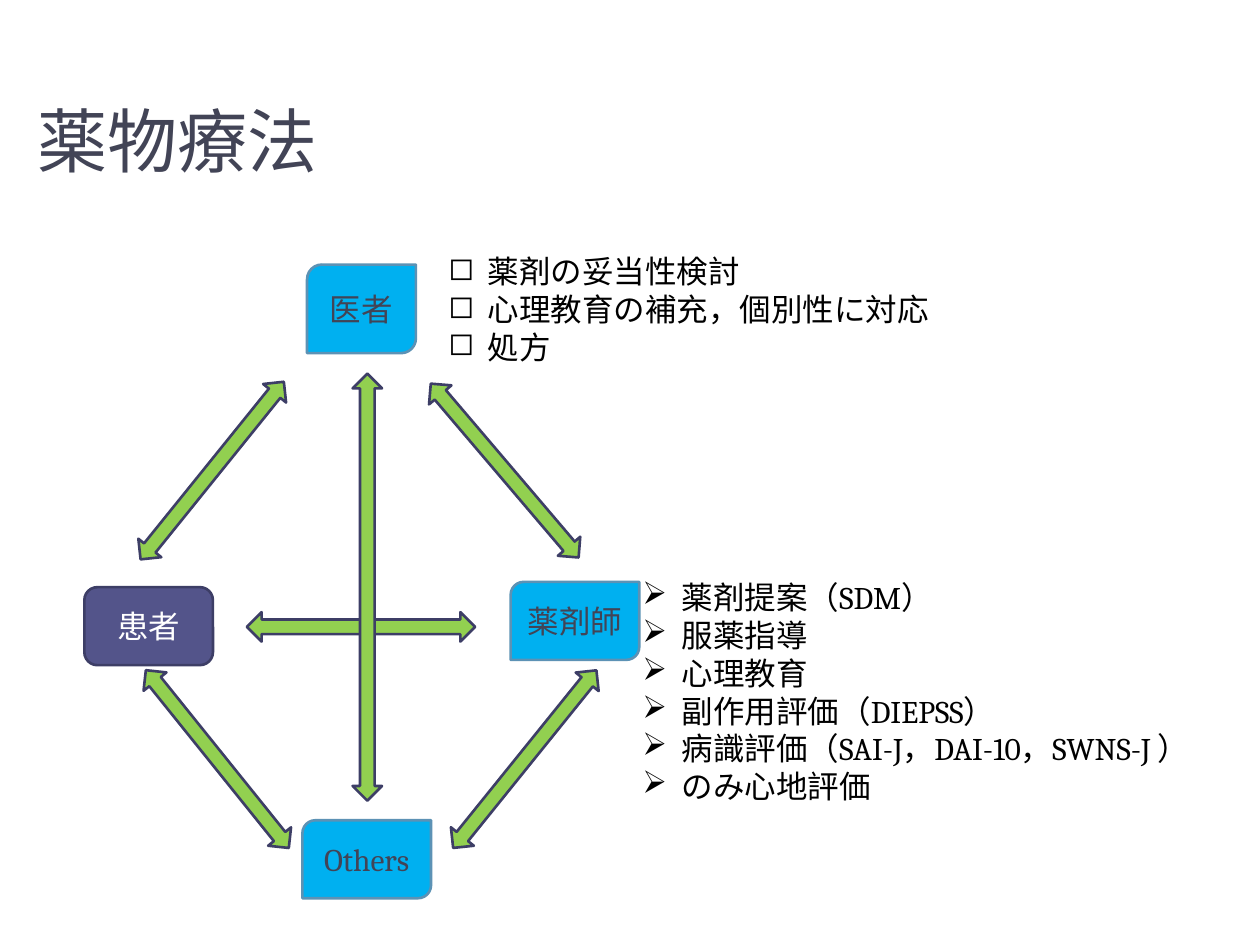
from dataclasses import dataclass
from lxml.etree import SubElement
from pptx import Presentation
from pptx.dml.color import RGBColor as Color
from pptx.enum.shapes import MSO_SHAPE as Shape
from pptx.enum.text import MSO_ANCHOR as Anchor, MSO_AUTO_SIZE as AutoSize, PP_ALIGN as Align
from pptx.oxml.ns import qn
from pptx.util import Pt


@dataclass(frozen=True)
class Theme:
    ink: str = "424456"
    black: str = "000000"
    white: str = "FFFFFF"
    patient: str = "53548A"
    staff: str = "00B0F0"
    arrow: str = "92D050"
    dark_edge: str = "3D3E66"
    staff_edge: str = "5C92B5"
    title_font: str = "Roboto"
    body_font: str = "Cambria"
    title_size: float = 40
    body_size: float = 18
    edge_width: float = 1.5
    bullet_indent: float = 22.5


def assign(target, values):
    for name, value in values.items():
        setattr(target, name, value)


class SlideBuilder:
    def __init__(self, page, theme):
        self.page = page
        self.theme = theme

    def add_span(self, para, text, color, font=None, size=None):
        span = para.add_run()
        span.text = text
        assign(span.font, {
            "name": font or self.theme.body_font,
            "size": Pt(size or self.theme.body_size),
        })
        span.font.color.rgb = Color.from_string(color)

    def title(self, text, left, top, width, height):
        box = self.page.shapes.title
        assign(box, {"left": Pt(left), "top": Pt(top), "width": Pt(width), "height": Pt(height)})
        assign(box.text_frame, {"vertical_anchor": Anchor.MIDDLE, "word_wrap": True})
        para = box.text_frame.paragraphs[0]
        para.alignment = Align.LEFT
        self.add_span(para, text, self.theme.ink, self.theme.title_font, self.theme.title_size)

    def shape(self, kind, left, top, width, height, fill, edge):
        shape = self.page.shapes.add_shape(kind, Pt(left), Pt(top), Pt(width), Pt(height))
        shape.shadow.inherit = False
        shape.fill.solid()
        shape.fill.fore_color.rgb = Color.from_string(fill)
        shape.line.color.rgb = Color.from_string(edge)
        shape.line.width = Pt(self.theme.edge_width)
        return shape

    def role(self, text, left, top, width=73.5, height=44.6, patient=False):
        theme = self.theme
        kind, fill, edge, color = (
            (Shape.ROUNDED_RECTANGLE, theme.patient, theme.dark_edge, theme.white)
            if patient
            else (Shape.ROUND_2_DIAG_RECTANGLE, theme.staff, theme.staff_edge, theme.ink)
        )
        box = self.shape(kind, left, top, width, height, fill, edge)
        assign(box.text_frame, {"vertical_anchor": Anchor.MIDDLE, "word_wrap": True})
        para = box.text_frame.paragraphs[0]
        para.alignment = Align.CENTER
        self.add_span(para, text, color)

    def arrow(self, center_x, center_y, rotation=0, length=130.4, thickness=16.8):
        arrow = self.shape(
            Shape.LEFT_RIGHT_ARROW, center_x - length / 2, center_y - thickness / 2,
            length, thickness, self.theme.arrow, self.theme.dark_edge,
        )
        arrow.rotation = rotation

    def bullets(self, lines, mark, left, top, width, height, wrap=True):
        box = self.page.shapes.add_textbox(Pt(left), Pt(top), Pt(width), Pt(height))
        frame = box.text_frame
        assign(frame, {"word_wrap": wrap, "auto_size": AutoSize.SHAPE_TO_FIT_TEXT})
        indent = Pt(self.theme.bullet_indent)
        for index, line in enumerate(lines):
            para = frame.add_paragraph() if index else frame.paragraphs[0]
            properties = para._p.get_or_add_pPr()
            properties.set("marL", str(indent))
            properties.set("indent", str(-indent))
            SubElement(properties, qn("a:buChar")).set("char", mark)
            self.add_span(para, line, self.theme.black)


def main():
    deck = Presentation()
    assign(deck, {"slide_width": Pt(720), "slide_height": Pt(540)})
    builder = SlideBuilder(deck.slides.add_slide(deck.slide_layouts[5]), Theme())

    builder.title("薬物療法", 14.4, 37.4, 648, 84.2)
    builder.role("患者", 48.2, 335.5, patient=True)
    builder.role("医者", 175.5, 151.2, width=62.2, height=50.6)
    builder.role("薬剤師", 291.8, 332.5)
    builder.arrow(206.3, 358.2)
    builder.bullets(
        ["薬剤提案（SDM）", "服薬指導", "心理教育", "副作用評価（DIEPSS）",
         "病識評価（SAI-J，DAI-10，SWNS-J ）", "のみ心地評価"],
        "➢", 360, 326.9, 387.4, 138.2,
    )
    builder.bullets(
        ["薬剤の妥当性検討", "心理教育の補充，個別性に対応", "処方"],
        "◻", 249.1, 140.4, 291.6, 72.7, wrap=False,
    )
    builder.role("Others", 172.8, 468.7)
    for center_x, center_y, rotation in (
        (121.3, 268.9, 308.9),
        (288.4, 268.9, 49.6),
        (124.2, 433.8, 51.2),
        (299.9, 433.8, 308.9),
    ):
        builder.arrow(center_x, center_y, rotation)
    builder.arrow(209.9, 335.5, 270, length=244)
    deck.save("out.pptx")


if __name__ == "__main__":
    main()
